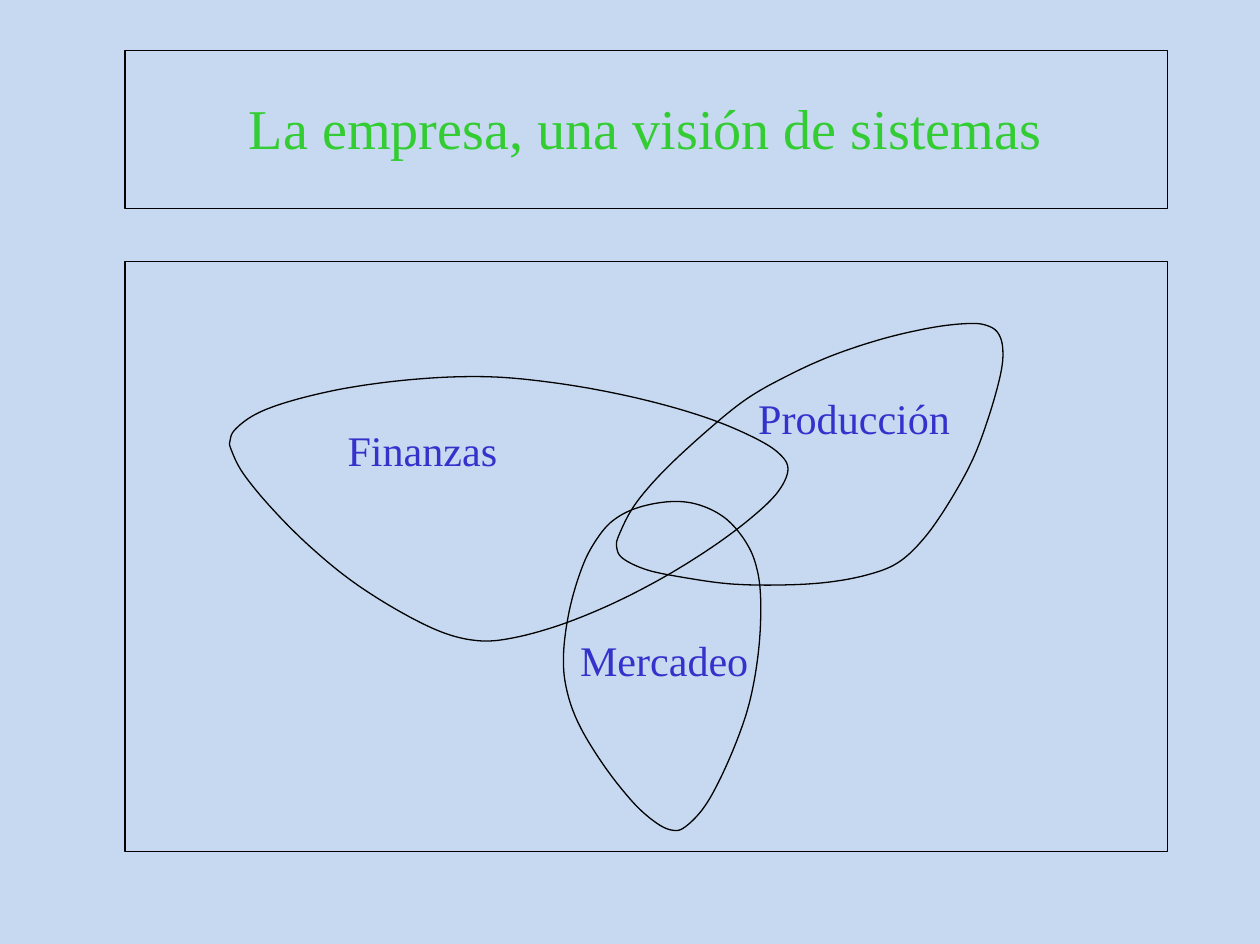
from pptx import Presentation, util as u
from pptx.dml.color import RGBColor
from pptx.enum import shapes, text

FONT = "Times New Roman"


def color(value):
    return RGBColor.from_string(value)


def smooth_outline(knots, steps=10):
    """Sample a closed Catmull-Rom curve through the knots."""
    points = []
    for i in range(len(knots)):
        before, start, end, after = (knots[(i + k) % len(knots)] for k in (-1, 0, 1, 2))
        for step in range(steps):
            t = step / steps
            points.append(tuple(
                u.Inches(b + t / 2 * (c - a + t * (2 * a - 5 * b + 4 * c - d
                                                   + t * (3 * b - a - 3 * c + d))))
                for a, b, c, d in zip(before, start, end, after)))
    return points


presentation = Presentation()
presentation.slide_width = u.Inches(9.97)
presentation.slide_height = u.Inches(7.47)
slide = presentation.slides.add_slide(presentation.slide_layouts[5])
slide.background.fill.solid()
slide.background.fill.fore_color.rgb = color("C6D9F1")

# Title in its outlined box
title = slide.shapes.title
title.left, title.top = u.Inches(0.99), u.Inches(0.4)
title.width, title.height = u.Inches(8.25), u.Inches(1.25)
frame = title.text_frame
frame.text = "La empresa, una visión de sistemas"
frame.auto_size = text.MSO_AUTO_SIZE.NONE
frame.vertical_anchor = text.MSO_ANCHOR.TOP
frame.margin_left, frame.margin_top = u.Inches(0.98), u.Inches(0.34)
frame.margin_right = frame.margin_bottom = 0
paragraph = frame.paragraphs[0]
paragraph.alignment = text.PP_ALIGN.LEFT
paragraph.space_before = u.Pt(0)
paragraph.font.name, paragraph.font.size = FONT, u.Pt(32)
paragraph.font.color.rgb = color("33CC33")

# Diagram frame
diagram_frame = slide.shapes.add_shape(
    shapes.MSO_SHAPE.RECTANGLE,
    u.Inches(0.99), u.Inches(2.07), u.Inches(8.25), u.Inches(4.67))

# Overlapping areas of the company, as knots of smooth closed curves
production = [
    (7.9, 2.64), (7.82, 2.58), (7.68, 2.56), (7.39, 2.59), (6.99, 2.68), (6.57, 2.82),
    (6.2, 2.99), (5.89, 3.17), (5.56, 3.44), (5.24, 3.74), (5.02, 4), (4.9, 4.23),
    (4.88, 4.33), (4.93, 4.42), (5.12, 4.51), (5.41, 4.57), (5.77, 4.62), (6.15, 4.63),
    (6.53, 4.61), (6.86, 4.55), (7.11, 4.45), (7.32, 4.25), (7.52, 3.96), (7.7, 3.63),
    (7.83, 3.28), (7.92, 2.95), (7.935, 2.76)]
finance = [
    (1.82, 3.49), (1.86, 3.4), (2.02, 3.28), (2.28, 3.18), (2.67, 3.085), (3.1, 3.02),
    (3.54, 2.985), (3.94, 2.985), (4.35, 3.025), (4.78, 3.095), (5.22, 3.195),
    (5.63, 3.32), (5.96, 3.46), (6.16, 3.585), (6.235, 3.715), (6.15, 3.9),
    (5.93, 4.11), (5.62, 4.34), (5.24, 4.575), (4.83, 4.785), (4.42, 4.95),
    (4.05, 5.05), (3.78, 5.07), (3.49, 5), (3.13, 4.82), (2.76, 4.58), (2.42, 4.295),
    (2.13, 4), (1.92, 3.74), (1.83, 3.56)]
marketing = [
    (5.32, 6.57), (5.19, 6.51), (5.01, 6.35), (4.78, 6.06), (4.58, 5.73), (4.48, 5.44),
    (4.46, 5.16), (4.51, 4.81), (4.61, 4.48), (4.72, 4.27), (4.85, 4.12), (5.04, 4.02),
    (5.3, 3.97), (5.53, 3.995), (5.75, 4.11), (5.92, 4.32), (6, 4.55), (6.02, 4.83),
    (6, 5.17), (5.94, 5.52), (5.85, 5.81), (5.71, 6.14), (5.57, 6.39), (5.42, 6.545)]
areas = []
for knots in (production, finance, marketing):
    start, *rest = smooth_outline(knots)
    builder = slide.shapes.build_freeform(*start)
    builder.add_line_segments(rest, close=True)
    areas.append(builder.convert_to_shape())

# Thin black outlines without fill
for shape in (title, diagram_frame, *areas):
    shape.fill.background()
    shape.line.color.rgb = color("000000")
    shape.line.width = u.Pt(0.75)
for shape in (diagram_frame, *areas):
    shape.shadow.inherit = False

# Area names
for name, left, top, width in (("Finanzas", 2.75, 3.36, 1.25),
                               ("Producción", 6, 3.11, 1.6),
                               ("Mercadeo", 4.59, 5.02, 1.4)):
    label = slide.shapes.add_textbox(
        u.Inches(left), u.Inches(top), u.Inches(width), u.Inches(0.4))
    frame = label.text_frame
    frame.text = name
    frame.word_wrap = True
    frame.margin_left = frame.margin_top = frame.margin_right = frame.margin_bottom = 0
    paragraph = frame.paragraphs[0]
    paragraph.alignment = text.PP_ALIGN.LEFT
    paragraph.line_spacing = u.Pt(28.7)
    paragraph.font.name, paragraph.font.size = FONT, u.Pt(24)
    paragraph.font.color.rgb = color("3333CC")

presentation.save("out.pptx")
